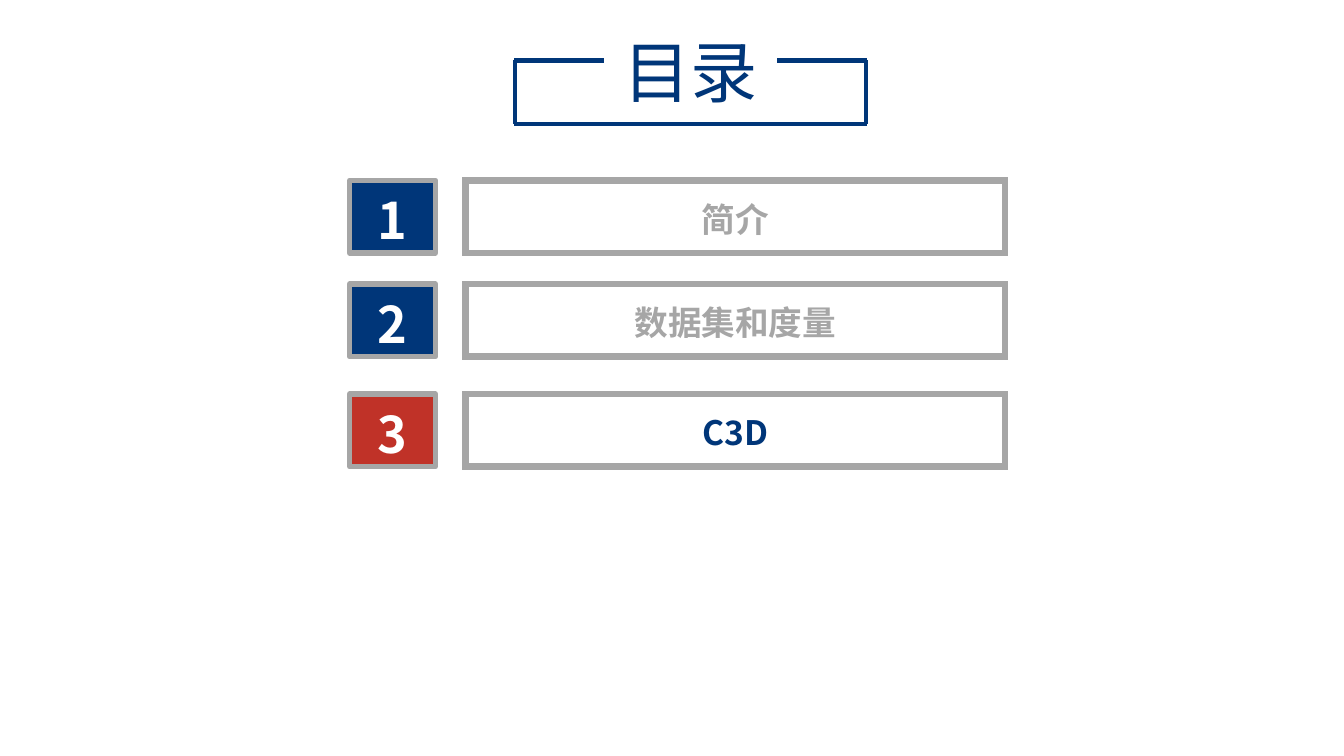
from dataclasses import dataclass

from lxml.etree import SubElement
from pptx import Presentation
from pptx.dml.color import RGBColor
from pptx.enum.shapes import MSO_CONNECTOR, MSO_SHAPE
from pptx.enum.text import MSO_ANCHOR, PP_ALIGN
from pptx.oxml.ns import qn
from pptx.util import Pt

FONT = "Noto Sans CJK SC"
NAVY, RED, GRAY, WHITE = "003679", "C03228", "A6A6A6", "FFFFFF"

NUMBER_LEFT, NUMBER_WIDTH = 249.8, 61.2
LABEL_LEFT, LABEL_WIDTH = 332.6, 385.2
ROW_HEIGHT, LABEL_TEXT_HEIGHT = 51.8, 36.7


@dataclass
class Chapter:
    number: str
    title: str
    top: float
    number_fill: str
    title_color: str


@dataclass
class Line:
    x1: float
    y1: float
    x2: float
    y2: float


CHAPTERS = [
    Chapter("1", "简介", 128.9, NAVY, GRAY),
    Chapter("2", "数据集和度量", 203, NAVY, GRAY),
    Chapter("3", "C3D", 281.5, RED, NAVY),
]

TITLE_FRAME = [
    Line(555.1, 43.2, 619.2, 43.2),
    Line(367.2, 43.2, 431.3, 43.2),
    Line(367.2, 88.6, 619.2, 88.6),
    Line(367.9, 43.2, 367.9, 88.6),
    Line(618.5, 43.2, 618.5, 88.6),
]


def rgb(color: str) -> RGBColor:
    return RGBColor.from_string(color)


def write(sp, text: str, size: float, color: str, bold: bool = True,
          spacing: float = 1.1) -> None:
    tf = sp.text_frame
    tf.word_wrap = True
    tf.vertical_anchor = MSO_ANCHOR.MIDDLE
    p = tf.paragraphs[0]
    p.text = text
    p.alignment = PP_ALIGN.CENTER
    p.line_spacing = spacing
    p.font.name = FONT
    p.font.size = Pt(size)
    p.font.bold = bold
    p.font.color.rgb = rgb(color)
    # Chinese glyphs take the East Asian typeface
    SubElement(p._p.pPr.find(qn("a:defRPr")), qn("a:ea"), typeface=FONT)


def add_text(s, left: float, top: float, width: float, height: float):
    return s.shapes.add_textbox(Pt(left), Pt(top), Pt(width), Pt(height))


def add_box(s, left: float, top: float, width: float, line_width: float):
    sp = s.shapes.add_shape(MSO_SHAPE.RECTANGLE, Pt(left), Pt(top),
                            Pt(width), Pt(ROW_HEIGHT))
    sp.shadow.inherit = False
    sp.fill.background()
    sp.line.color.rgb = rgb(GRAY)
    sp.line.width = Pt(line_width)
    return sp


def add_line(s, line: Line) -> None:
    c = s.shapes.add_connector(MSO_CONNECTOR.STRAIGHT, Pt(line.x1), Pt(line.y1),
                               Pt(line.x2), Pt(line.y2))
    c.line.color.rgb = rgb(NAVY)
    c.line.width = Pt(3)
    SubElement(c._element.spPr, qn("a:effectLst"))


def add_chapter(s, chapter: Chapter) -> None:
    number = add_box(s, NUMBER_LEFT, chapter.top, NUMBER_WIDTH, 4)
    number.fill.solid()
    number.fill.fore_color.rgb = rgb(chapter.number_fill)
    write(number, chapter.number, 36, WHITE)

    label = add_box(s, LABEL_LEFT, chapter.top, LABEL_WIDTH, 4.5)
    # Square corners
    SubElement(label._element.spPr.find(qn("a:ln")), qn("a:miter"), lim="800000")
    text_top = chapter.top + (ROW_HEIGHT - LABEL_TEXT_HEIGHT) / 2
    title = add_text(s, LABEL_LEFT, text_top, LABEL_WIDTH, LABEL_TEXT_HEIGHT)
    write(title, chapter.title, 24, chapter.title_color)


def main() -> None:
    prs = Presentation()
    prs.slide_width, prs.slide_height = Pt(960), Pt(540)
    s = prs.slides.add_slide(prs.slide_layouts[6])

    # Title in its open frame
    heading = add_text(s, 419.8, 18, 146.9, 65.5)
    write(heading, "目录", 48, NAVY, bold=False, spacing=1.0)
    for line in TITLE_FRAME:
        add_line(s, line)

    # Chapter list
    for chapter in CHAPTERS:
        add_chapter(s, chapter)

    prs.save("out.pptx")


if __name__ == "__main__":
    main()
